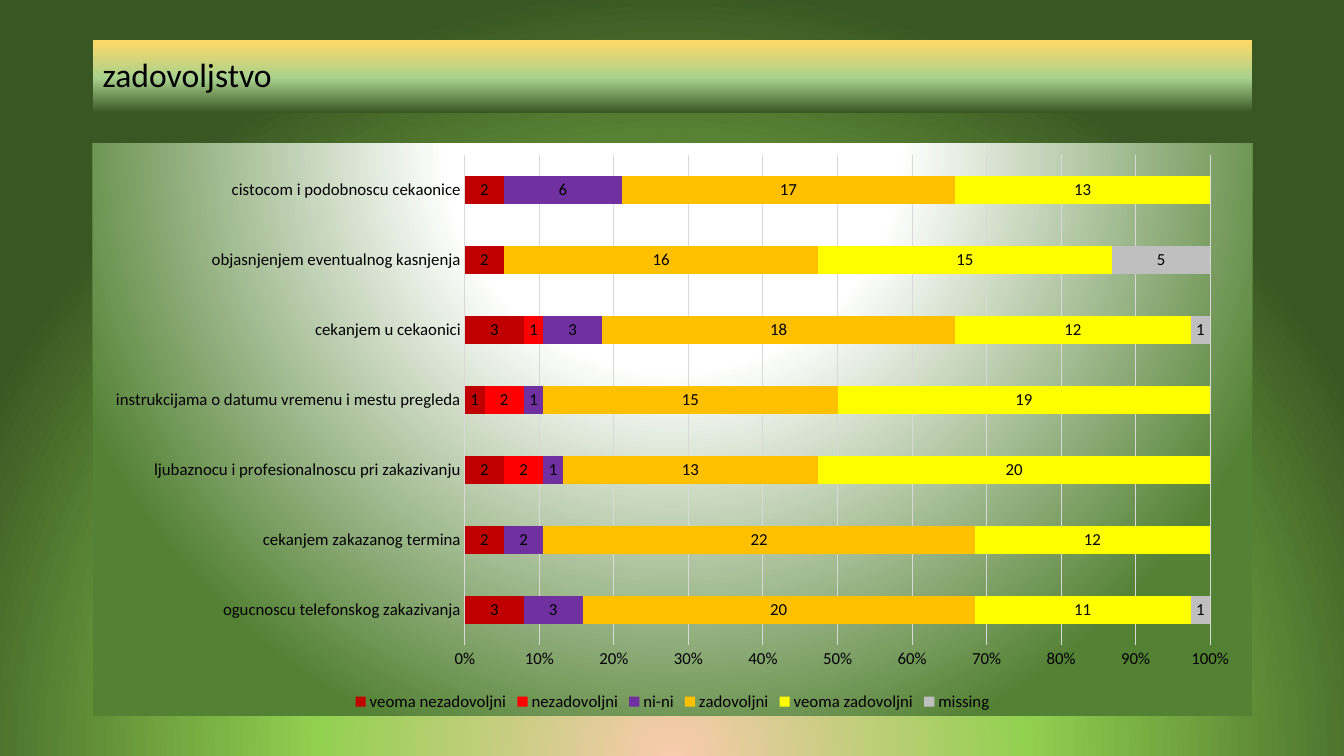
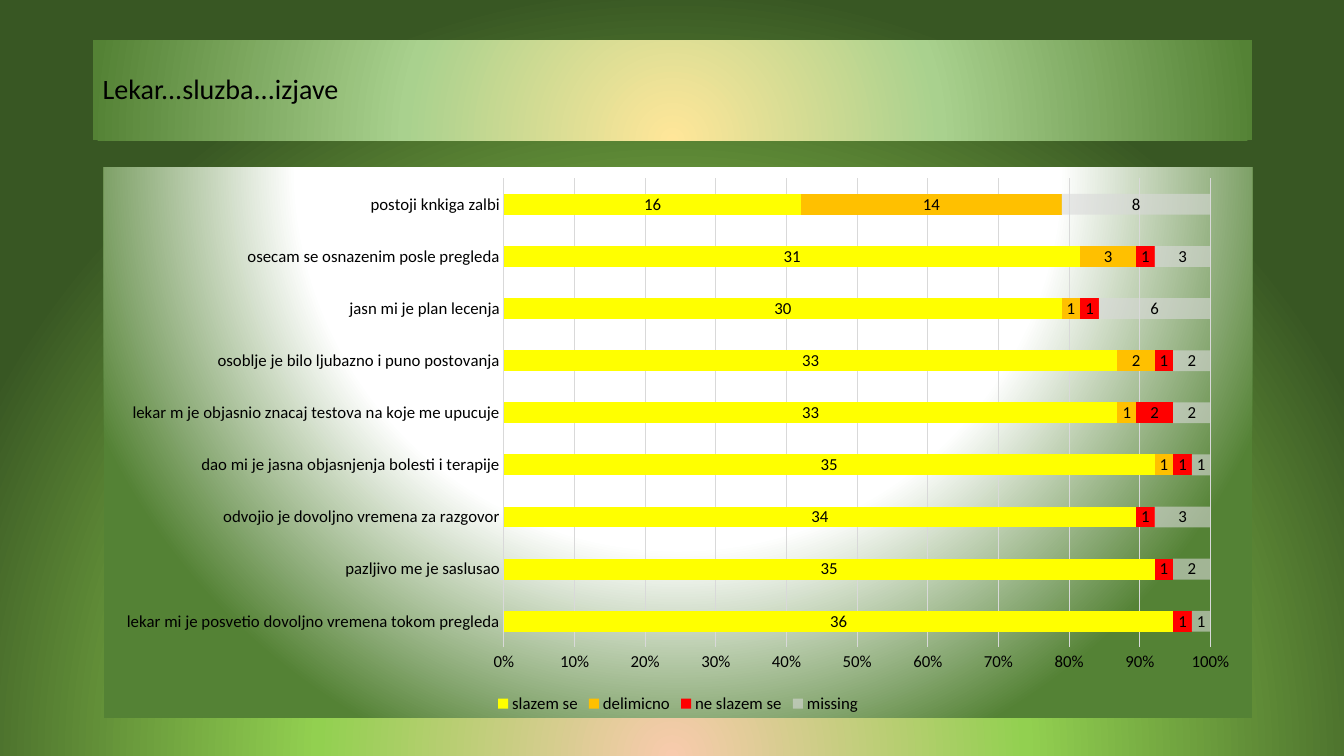
import dataclasses

import lxml.etree
import pptx
import pptx.chart.data
import pptx.dml.color
import pptx.enum.chart
import pptx.enum.shapes
import pptx.enum.text
import pptx.oxml.ns
import pptx.util
from pptx.util import Inches, Pt

qn = pptx.oxml.ns.qn
rgb = pptx.dml.color.RGBColor.from_string


@dataclasses.dataclass(frozen=True)
class Theme:
    font: str = "Calibri"
    text: str = "000000"
    grid: str = "D9D9D9"
    dark_red: str = "C00000"
    red: str = "FF0000"
    purple: str = "7030A0"
    orange: str = "FFC000"
    yellow: str = "FFFF00"
    gray: str = "BFBFBF"
    pale_gray: str = "D9D9D9"
    backdrop: tuple = ((0, "F8CBAD"), (46, "92D050"), (100, "385723"))
    banner_linear: tuple = ((0, "385723"), (48, "A9D18E"), (100, "FFD966"))
    banner_radial: tuple = ((0, "FFE699"), (46, "A9D18E"), (100, "548235"))
    panel_edge: str = "548235"
    chart_size: int = 12
    line_width: float = 0.75


theme = Theme()
FROM_BELOW = (50, 130, 50, -30)
FROM_ABOVE = (50, -80, 50, 180)


def gradient_fill(stops, focus=None, angle=0):
    """Return a gradFill: circular around the focus rectangle, else linear."""
    fill = lxml.etree.Element(qn("a:gradFill"), rotWithShape="1")
    stop_list = lxml.etree.SubElement(fill, qn("a:gsLst"))
    for position, color in stops:
        stop = lxml.etree.SubElement(stop_list, qn("a:gs"), pos=str(position * 1000))
        lxml.etree.SubElement(stop, qn("a:srgbClr"), val=color)
    if focus:
        circle = lxml.etree.SubElement(fill, qn("a:path"), path="circle")
        sides = {side: str(value * 1000) for side, value in zip("ltrb", focus)}
        lxml.etree.SubElement(circle, qn("a:fillToRect"), sides)
    else:
        lxml.etree.SubElement(fill, qn("a:lin"), ang=str(angle * 60000), scaled="0")
    return fill


def add_banner(page, text, *, size, height, fill):
    box = page.shapes.add_shape(
        pptx.enum.shapes.MSO_SHAPE.RECTANGLE,
        Inches(0.92), Inches(0.4), Inches(11.5), Inches(height))
    box.shadow.inherit = False
    box.line.fill.background()
    box.fill.gradient()
    default = box._element.spPr.find(qn("a:gradFill"))
    default.getparent().replace(default, fill)
    frame = box.text_frame
    frame.word_wrap = True
    frame.vertical_anchor = pptx.enum.text.MSO_ANCHOR.MIDDLE
    para = frame.paragraphs[0]
    para.alignment = pptx.enum.text.PP_ALIGN.LEFT
    para.line_spacing = 0.9
    span = para.add_run()
    span.text = text
    span.font.name = theme.font
    span.font.size = Pt(size)
    span.font.color.rgb = rgb(theme.text)


# Series: name, colour, opacity in percent, values from the bottom bar up.
slides = [
    dict(
        title="zadovoljstvo", title_size=24, banner_height=0.72,
        banner_fill=gradient_fill(theme.banner_linear, angle=270),
        chart_at=(0.92, 1.42, 11.5, 5.68), white_until=35,
        categories=[
            "ogucnoscu telefonskog zakazivanja",
            "cekanjem zakazanog termina",
            "ljubaznocu i profesionalnoscu pri zakazivanju",
            "instrukcijama o datumu vremenu i mestu pregleda",
            "cekanjem u cekaonici",
            "objasnjenjem eventualnog kasnjenja",
            "cistocom i podobnoscu cekaonice",
        ],
        series=[
            ("veoma nezadovoljni", theme.dark_red, 100, [3, 2, 2, 1, 3, 2, 2]),
            ("nezadovoljni", theme.red, 100, [None, None, 2, 2, 1, None, None]),
            ("ni-ni", theme.purple, 100, [3, 2, 1, 1, 3, None, 6]),
            ("zadovoljni", theme.orange, 100, [20, 22, 13, 15, 18, 16, 17]),
            ("veoma zadovoljni", theme.yellow, 100, [11, 12, 20, 19, 12, 15, 13]),
            ("missing", theme.gray, 100, [1, None, None, None, 1, 5, None]),
        ],
    ),
    dict(
        title="Lekar...sluzba...izjave", title_size=20, banner_height=0.99,
        banner_fill=gradient_fill(theme.banner_radial, focus=FROM_BELOW),
        chart_at=(1.03, 1.66, 11.39, 5.46), white_until=60,
        categories=[
            "lekar mi je posvetio dovoljno vremena tokom pregleda",
            "pazljivo me je saslusao",
            "odvojio je dovoljno vremena za razgovor",
            "dao mi je jasna objasnjenja bolesti i terapije",
            "lekar m je objasnio znacaj testova na koje me upucuje",
            "osoblje je bilo ljubazno i puno postovanja",
            "jasn mi je plan lecenja",
            "osecam se osnazenim posle pregleda",
            "postoji knkiga zalbi",
        ],
        series=[
            ("slazem se", theme.yellow, 100, [36, 35, 34, 35, 33, 33, 30, 31, 16]),
            ("delimicno", theme.orange, 100, [None, None, None, 1, 1, 2, 1, 3, 14]),
            ("ne slazem se", theme.red, 100, [1, 1, 1, 1, 2, 1, 1, 1, None]),
            ("missing", theme.pale_gray, 59, [1, 2, 3, 1, 2, 2, 6, 3, 8]),
        ],
    ),
]

deck = pptx.Presentation()
deck.slide_width = Inches(13.33)
deck.slide_height = Inches(7.5)

for content in slides:
    page = deck.slides.add_slide(deck.slide_layouts[6])
    page.background.fill.gradient()
    default = page._element.find(".//" + qn("p:bgPr")).find(qn("a:gradFill"))
    default.getparent().replace(default, gradient_fill(theme.backdrop, focus=FROM_BELOW))

    add_banner(page, content["title"], size=content["title_size"],
               height=content["banner_height"], fill=content["banner_fill"])

    data = pptx.chart.data.CategoryChartData()
    data.categories = content["categories"]
    for name, color, opacity, values in content["series"]:
        data.add_series(name, values)
    chart = page.shapes.add_chart(
        pptx.enum.chart.XL_CHART_TYPE.BAR_STACKED_100,
        *map(Inches, content["chart_at"]), data).chart
    chart.has_title = False
    chart.has_legend = True
    chart.legend.position = pptx.enum.chart.XL_LEGEND_POSITION.BOTTOM
    chart.legend.include_in_layout = False

    plot = chart.plots[0]
    plot.gap_width = 150
    plot.overlap = 100
    plot.vary_by_categories = False
    plot.has_data_labels = True
    labels = plot.data_labels
    labels.show_value = True
    labels.position = pptx.enum.chart.XL_LABEL_POSITION.CENTER

    rows, scale = chart.category_axis, chart.value_axis
    for axis in (rows, scale):
        axis.major_tick_mark = pptx.enum.chart.XL_TICK_MARK.NONE
        axis.minor_tick_mark = pptx.enum.chart.XL_TICK_MARK.NONE
    scale.tick_labels.number_format = "0%"
    scale.tick_labels.number_format_is_linked = False
    scale.format.line.fill.background()
    scale.has_major_gridlines = True
    for line in (rows.format.line, scale.major_gridlines.format.line):
        line.color.rgb = rgb(theme.grid)
        line.width = Pt(theme.line_width)

    for part in (chart, chart.legend, labels, rows.tick_labels, scale.tick_labels):
        part.font.name = theme.font
        part.font.size = Pt(theme.chart_size)
        part.font.color.rgb = rgb(theme.text)

    for bars, (name, color, opacity, values) in zip(plot.series, content["series"]):
        bars.invert_if_negative = False
        bars.format.fill.solid()
        bars.format.fill.fore_color.rgb = rgb(color)
        if opacity < 100:
            tint = bars._element.find(".//" + qn("a:srgbClr"))
            lxml.etree.SubElement(tint, qn("a:alpha"), val=str(opacity * 1000))

    panel = lxml.etree.Element(qn("c:spPr"))
    stops = ((0, "FFFFFF"), (content["white_until"], "FFFFFF"), (100, theme.panel_edge))
    panel.append(gradient_fill(stops, focus=FROM_ABOVE))
    outline = lxml.etree.SubElement(panel, qn("a:ln"))
    lxml.etree.SubElement(outline, qn("a:noFill"))
    chart._chartSpace.find(qn("c:chart")).addnext(panel)

deck.save("out.pptx")
